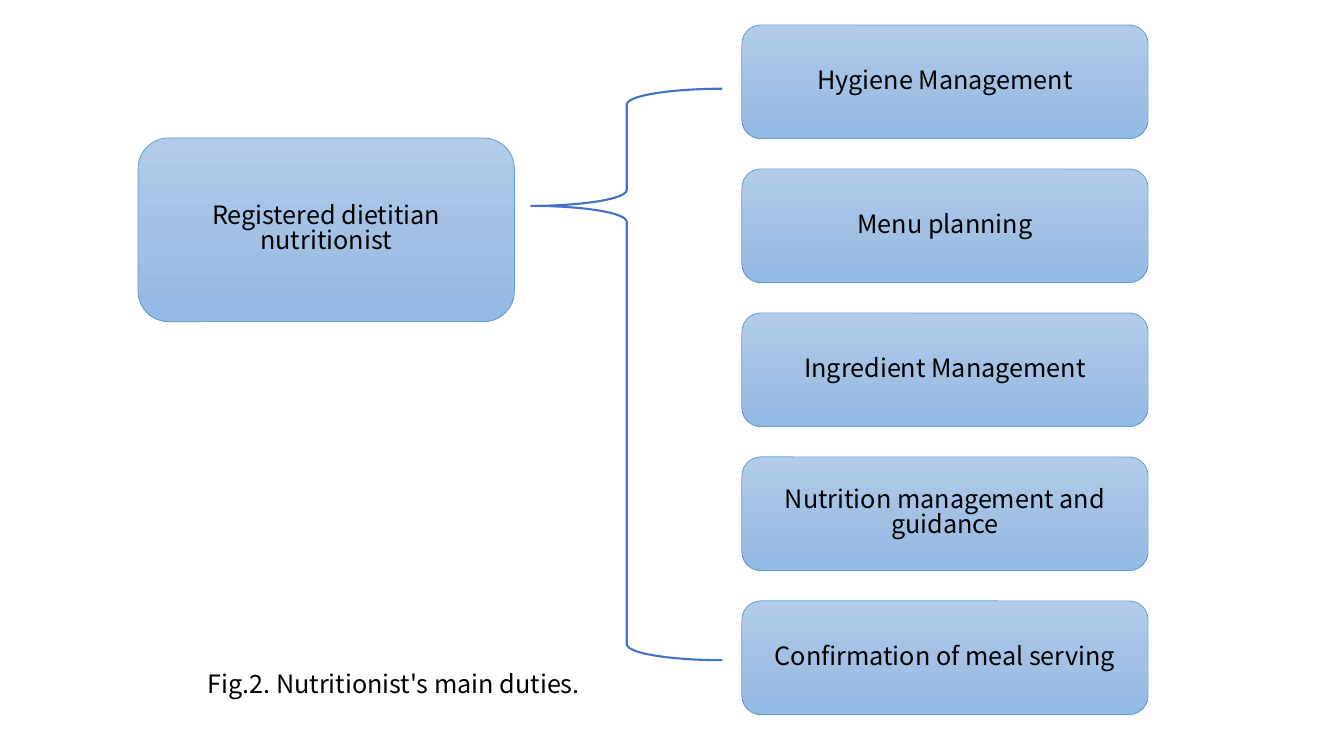
"""Build the slide showing a nutritionist's main duties."""
import copy

import pptx
import pptx.dml.color
import pptx.enum.shapes
import pptx.enum.text
import pptx.oxml.ns
import pptx.util

Pt = pptx.util.Pt
RGB = pptx.dml.color.RGBColor.from_string
SHAPE = pptx.enum.shapes.MSO_SHAPE
COLORS = {"top": "B1CBE9", "middle": "A3C1E5", "bottom": "93B9E4",
          "border": "5B9BD5", "brace": "4472C4", "text": "000000"}
FONT = "Noto Sans CJK JP"
DUTIES = ["Hygiene Management", "Menu planning", "Ingredient Management",
          "Nutrition management and guidance", "Confirmation of meal serving"]


def set_text(sp, text):
    tf = sp.text_frame
    tf.word_wrap = True
    p = tf.paragraphs[0]
    p.text = text
    p.line_spacing = 0.82
    p.font.name = FONT
    p.font.size = Pt(18)
    p.font.color.rgb = RGB(COLORS["text"])
    return p


def add_box(s, left, top, width, height, text):
    sp = s.shapes.add_shape(SHAPE.ROUNDED_RECTANGLE, Pt(left), Pt(top), Pt(width), Pt(height))
    sp.shadow.inherit = False
    sp.fill.gradient()
    sp.fill.gradient_angle = 270
    first = sp._element.spPr.find(".//" + pptx.oxml.ns.qn("a:gs"))
    first.addnext(copy.deepcopy(first))
    for stop, position, name in zip(sp.fill.gradient_stops, (0, 0.5, 1), ("top", "middle", "bottom")):
        stop.position = position
        stop.color.rgb = RGB(COLORS[name])
    sp.line.color.rgb = RGB(COLORS["border"])
    sp.line.width = Pt(0.5)
    sp.text_frame.vertical_anchor = pptx.enum.text.MSO_ANCHOR.MIDDLE
    set_text(sp, text).alignment = pptx.enum.text.PP_ALIGN.CENTER


prs = pptx.Presentation()
prs.slide_width = Pt(960)
prs.slide_height = Pt(540)
s = prs.slides.add_slide(prs.slide_layouts[6])

add_box(s, 98.6, 98.6, 268.9, 131.2, "Registered dietitian\vnutritionist")

brace = s.shapes.add_shape(SHAPE.LEFT_BRACE, Pt(379.4), Pt(63.4), Pt(136.6), Pt(408.2))
brace.shadow.inherit = False
brace.adjustments[0] = 0.083
brace.adjustments[1] = 0.205
brace.fill.background()
brace.line.color.rgb = RGB(COLORS["brace"])
brace.line.width = Pt(1.5)

for i, duty in enumerate(DUTIES):
    add_box(s, 529.9, 17.8 + 102.85 * i, 290.2, 81.2, duty)

caption = s.shapes.add_textbox(Pt(141.1), Pt(477.4), Pt(289.4), Pt(29.1))
set_text(caption, "Fig.2. Nutritionist's main duties.")

prs.save("out.pptx")
